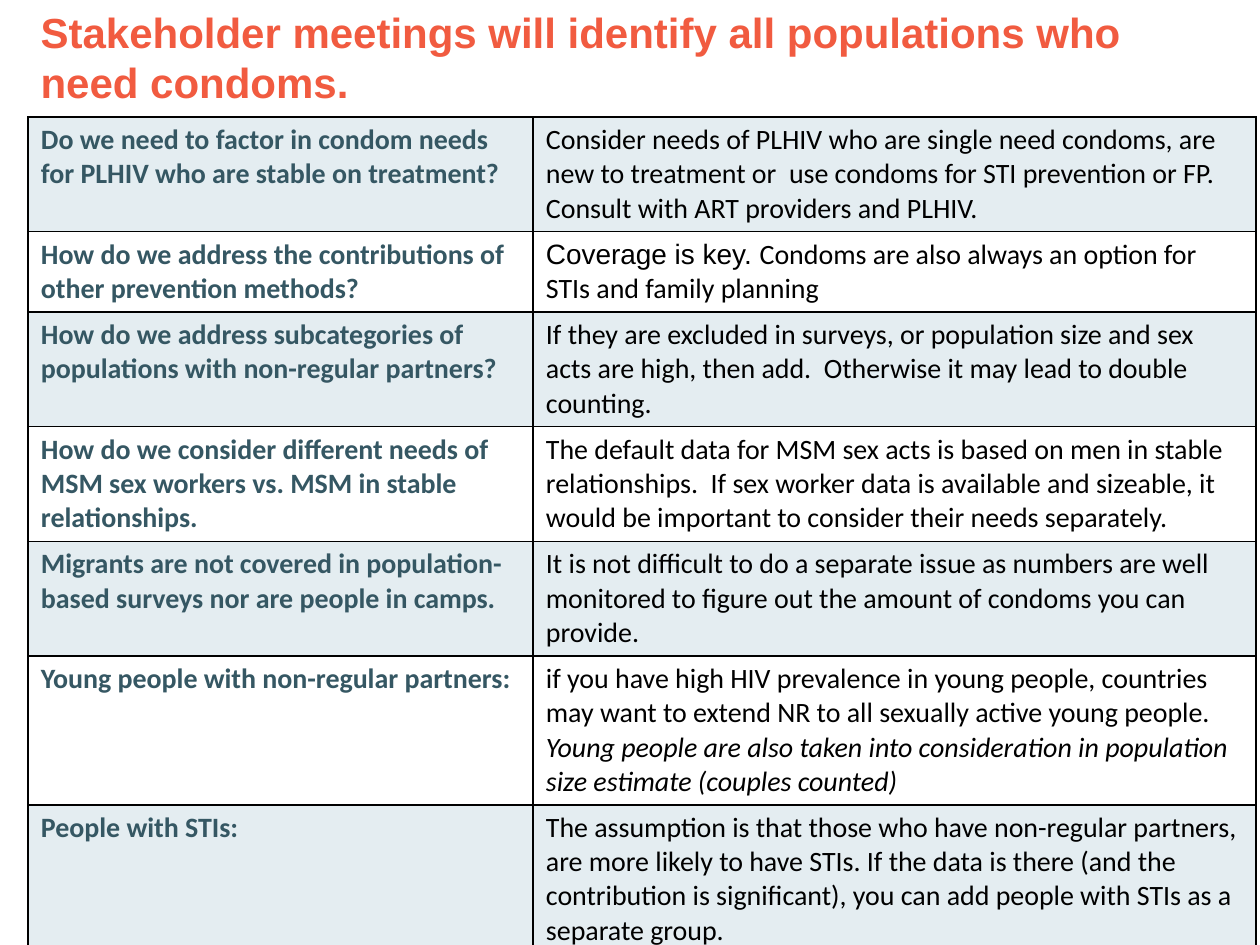
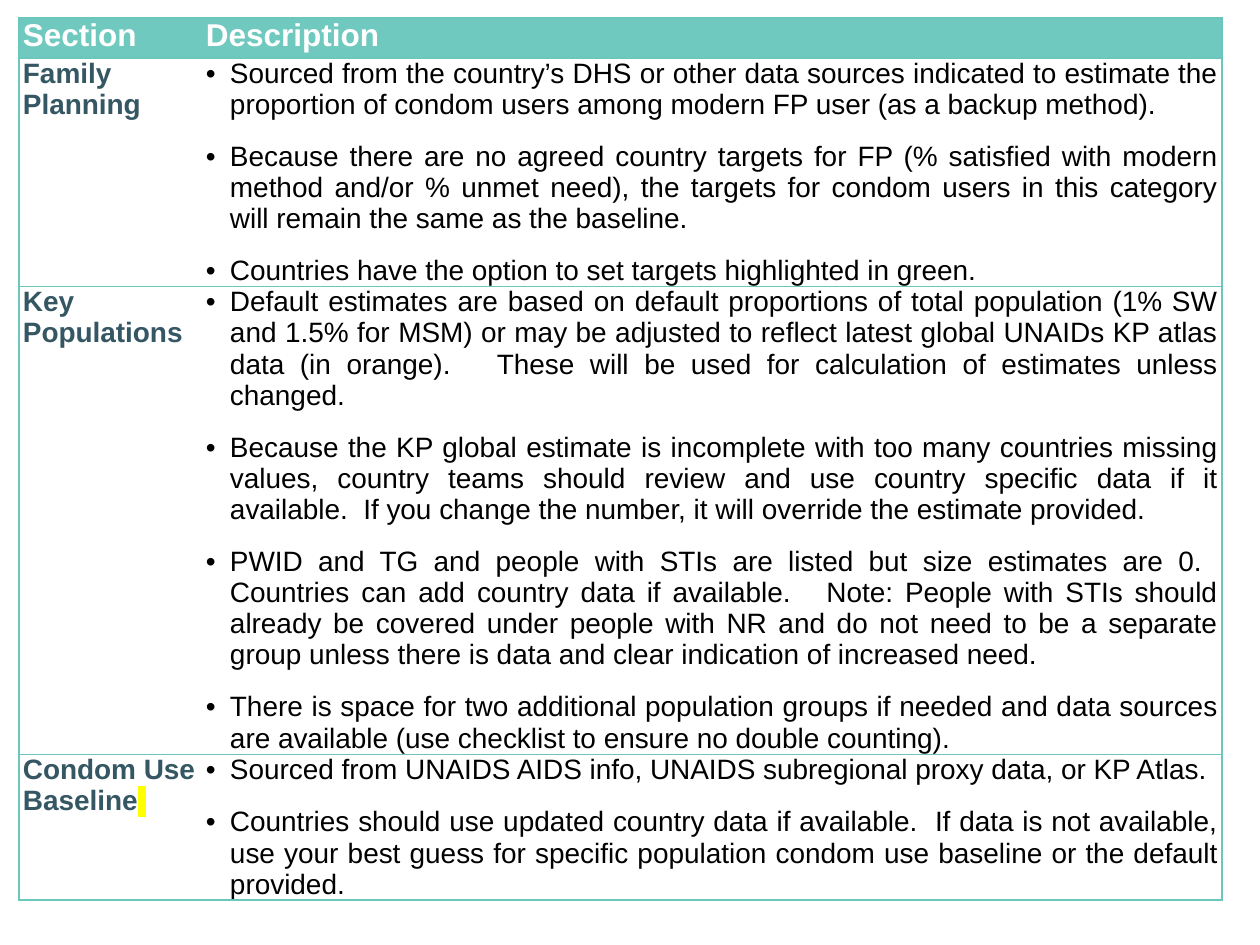
from dataclasses import dataclass
from typing import NamedTuple

from lxml import etree
from pptx import Presentation
from pptx import util as u
from pptx.dml import color
from pptx.enum import text
from pptx.oxml import ns

PX = 914400 / 126
TEAL, SLATE, CORAL = "6BC6BB", "355763", "F15B40"
MIST, BLACK, WHITE, YELLOW = "E4EDF1", "000000", "FFFFFF", "FFFF00"
HEADER_TEAL = "70C9BF"


class Piece(NamedTuple):
    words: str
    font: str | None = None
    italic: bool = False
    highlight: str | None = None


class Style(NamedTuple):
    font: str
    size: int
    colour: str
    bold: bool = False
    bulleted: bool = False


class Cell(NamedTuple):
    paragraphs: list[list[Piece]]
    style: Style
    fill: str | None = None


@dataclass
class Grid:
    left: int
    top: int
    columns: list[int]
    rows: list[int]
    cells: list[list[Cell]]
    border: str
    border_width: float
    inner_verticals: bool = True
    side_margin: int = 13
    end_margin: int = 6


TITLE = Style("Arial", 24, CORAL, bold=True)
QUESTION = Style("Calibri", 16, SLATE, bold=True)
ANSWER = Style("Calibri", 16, BLACK)
HEADING = Style("Arial", 18, WHITE, bold=True)
SECTION = Style("Arial", 16, SLATE, bold=True)
DESCRIPTION = Style("Arial", 16, BLACK, bulleted=True)

QUESTIONS = [
    ("Do we need to factor in condom needs for PLHIV who are stable on treatment?",
     [[Piece("Consider needs of PLHIV who are single need condoms, are new to treatment or  "
             "use condoms for STI prevention or FP.")],
      [Piece("Consult with ART providers and PLHIV.")]]),
    ("How do we address the contributions of other prevention methods?",
     [[Piece("Coverage is key. ", font="Arial"),
       Piece("Condoms are also always an option for STIs and family planning")]]),
    ("How do we address subcategories of populations with non-regular partners?",
     [[Piece("If they are excluded in surveys, or population size and sex acts are high, "
             "then add.  Otherwise it may lead to double counting.")]]),
    ("How do we consider different needs of MSM sex workers vs. MSM in stable relationships.",
     [[Piece("The default data for MSM sex acts is based on men in stable relationships.  "
             "If sex worker data is available and sizeable, it would be important to "
             "consider their needs separately.")]]),
    ("Migrants are not covered in population-based surveys nor are people in camps.",
     [[Piece("It is not difficult to do a separate issue as numbers are well monitored "
             "to figure out the amount of condoms you can provide.")]]),
    ("Young people with non-regular partners:",
     [[Piece("if you have high HIV prevalence in young people, countries may want to "
             "extend NR to all sexually active young people.  "),
       Piece("Young people are also taken into consideration in population size estimate "
             "(couples counted)", italic=True)]]),
    ("People with STIs:",
     [[Piece("The assumption is that those who have non-regular partners, are more likely "
             "to have STIs. If the data is there (and the contribution is significant), "
             "you can add people with STIs as a separate group.")]]),
]

SECTIONS = [
    ([Piece("Family Planning")], [
        "Sourced from the country’s DHS or other data sources indicated to estimate the "
        "proportion of condom users among modern FP user (as a backup method).",
        "Because there are no agreed country targets for FP (% satisfied with modern method "
        "and/or % unmet need), the targets for condom users in this category will remain "
        "the same as the baseline.",
        "Countries have the option to set targets highlighted in green.",
    ]),
    ([Piece("Key Populations")], [
        "Default estimates are based on default proportions of total population (1% SW and "
        "1.5% for MSM) or may be adjusted to reflect latest global UNAIDs KP atlas data "
        "(in orange).   These will be used for calculation of estimates unless changed.",
        "Because the KP global estimate is incomplete with too many countries missing values, "
        "country teams should review and use country specific data if it available.  If you "
        "change the number, it will override the estimate provided.",
        "PWID and TG and people with STIs are listed but size estimates are 0.  Countries can "
        "add country data if available.   Note: People with STIs should already be covered "
        "under people with NR and do not need to be a separate group unless there is data "
        "and clear indication of increased need.",
        "There is space for two additional population groups if needed and data sources are "
        "available (use checklist to ensure no double counting).",
    ]),
    ([Piece("Condom Use Baseline"), Piece(" ", highlight=YELLOW)], [
        "Sourced from UNAIDS AIDS info, UNAIDS subregional proxy data, or KP Atlas.",
        "Countries should use updated country data if available.  If data is not available, "
        "use your best guess for specific population condom use baseline or the default "
        "provided.",
    ]),
]


def px(length: int) -> u.Emu:
    return u.Emu(round(length * PX))


def rgb(value: str) -> color.RGBColor:
    return color.RGBColor.from_string(value)


def add_node(parent, tag: str, **attributes: str):
    node = etree.SubElement(parent, ns.qn(tag))
    for name, value in attributes.items():
        node.set(name, value)
    return node


def add_bullet(paragraph) -> None:
    paragraph.alignment = text.PP_ALIGN.JUSTIFY
    paragraph.space_after = u.Pt(12)
    properties = paragraph._p.get_or_add_pPr()
    properties.set("marL", str(px(24)))
    properties.set("indent", str(px(-24)))
    add_node(properties, "a:buFont", typeface="Arial")
    add_node(properties, "a:buChar", char="•")


def write_paragraph(paragraph, pieces: list[Piece], style: Style) -> None:
    if style.bulleted:
        add_bullet(paragraph)
    font = paragraph.font
    font.name, font.size, font.bold = style.font, u.Pt(style.size), style.bold
    font.color.rgb = rgb(style.colour)
    for piece in pieces:
        run = paragraph.add_run()
        run.text = piece.words
        if piece.highlight:
            highlight = add_node(run._r.get_or_add_rPr(), "a:highlight")
            add_node(highlight, "a:srgbClr", val=piece.highlight)
        if piece.font:
            run.font.name = piece.font
        if piece.italic:
            run.font.italic = True


def write_text(frame, paragraphs: list[list[Piece]], style: Style) -> None:
    for index, pieces in enumerate(paragraphs):
        paragraph = frame.add_paragraph() if index else frame.paragraphs[0]
        write_paragraph(paragraph, pieces, style)


def draw_borders(cell, grid: Grid, column: int) -> None:
    last = len(grid.columns) - 1
    drawn = {
        "a:lnL": grid.inner_verticals or column == 0,
        "a:lnR": grid.inner_verticals or column == last,
        "a:lnT": True,
        "a:lnB": True,
    }
    properties = cell._tc.get_or_add_tcPr()
    for side, visible in drawn.items():
        line = add_node(properties, side, w=str(u.Pt(grid.border_width)))
        if visible:
            add_node(add_node(line, "a:solidFill"), "a:srgbClr", val=grid.border)
        else:
            add_node(line, "a:noFill")


def draw_grid(slide, grid: Grid) -> None:
    table = slide.shapes.add_table(
        len(grid.rows), len(grid.columns), px(grid.left), px(grid.top),
        px(sum(grid.columns)), px(sum(grid.rows))).table
    table.first_row = table.horz_banding = False
    for column, width in zip(table.columns, grid.columns):
        column.width = px(width)
    for row, height in zip(table.rows, grid.rows):
        row.height = px(height)
    for row_index, row_cells in enumerate(grid.cells):
        for column_index, content in enumerate(row_cells):
            cell = table.cell(row_index, column_index)
            cell.margin_left = cell.margin_right = px(grid.side_margin)
            cell.margin_top = cell.margin_bottom = px(grid.end_margin)
            draw_borders(cell, grid, column_index)
            if content.fill:
                cell.fill.solid()
                cell.fill.fore_color.rgb = rgb(content.fill)
            else:
                cell.fill.background()
            write_text(cell.text_frame, content.paragraphs, content.style)


def draw_title(slide, words: str) -> None:
    title = slide.shapes.title
    title.left, title.top, title.width, title.height = map(px, (28, 0, 1172, 115))
    frame = title.text_frame
    frame.word_wrap = True
    frame.auto_size = text.MSO_AUTO_SIZE.NONE
    frame.vertical_anchor = text.MSO_ANCHOR.TOP
    frame.paragraphs[0].alignment = text.PP_ALIGN.LEFT
    write_text(frame, [[Piece(words)]], TITLE)


def build_populations(deck) -> None:
    slide = deck.slides.add_slide(deck.slide_layouts[5])
    draw_title(slide, "Stakeholder meetings will identify all populations who need condoms.")
    cells = []
    for index, (question, answer) in enumerate(QUESTIONS):
        band = None if index % 2 else MIST
        cells.append([Cell([[Piece(question)]], QUESTION, band), Cell(answer, ANSWER, band)])
    draw_grid(slide, Grid(28, 117, [505, 723], [114, 79, 114, 113, 114, 147, 147],
                          cells, BLACK, 1))


def build_sections(deck) -> None:
    slide = deck.slides.add_slide(deck.slide_layouts[6])
    cells = [[Cell([[Piece(heading)]], HEADING, HEADER_TEAL)
              for heading in ("Section", "Description")]]
    for section, points in SECTIONS:
        cells.append([Cell([section], SECTION),
                      Cell([[Piece(point)] for point in points], DESCRIPTION)])
    draw_grid(slide, Grid(19, 18, [183, 1020], [40, 228, 468, 145], cells, TEAL, 0.75,
                          inner_verticals=False, side_margin=4, end_margin=0))


def main() -> None:
    deck = Presentation()
    deck.slide_width, deck.slide_height = px(1260), px(945)
    build_populations(deck)
    build_sections(deck)
    deck.save("out.pptx")


if __name__ == "__main__":
    main()
